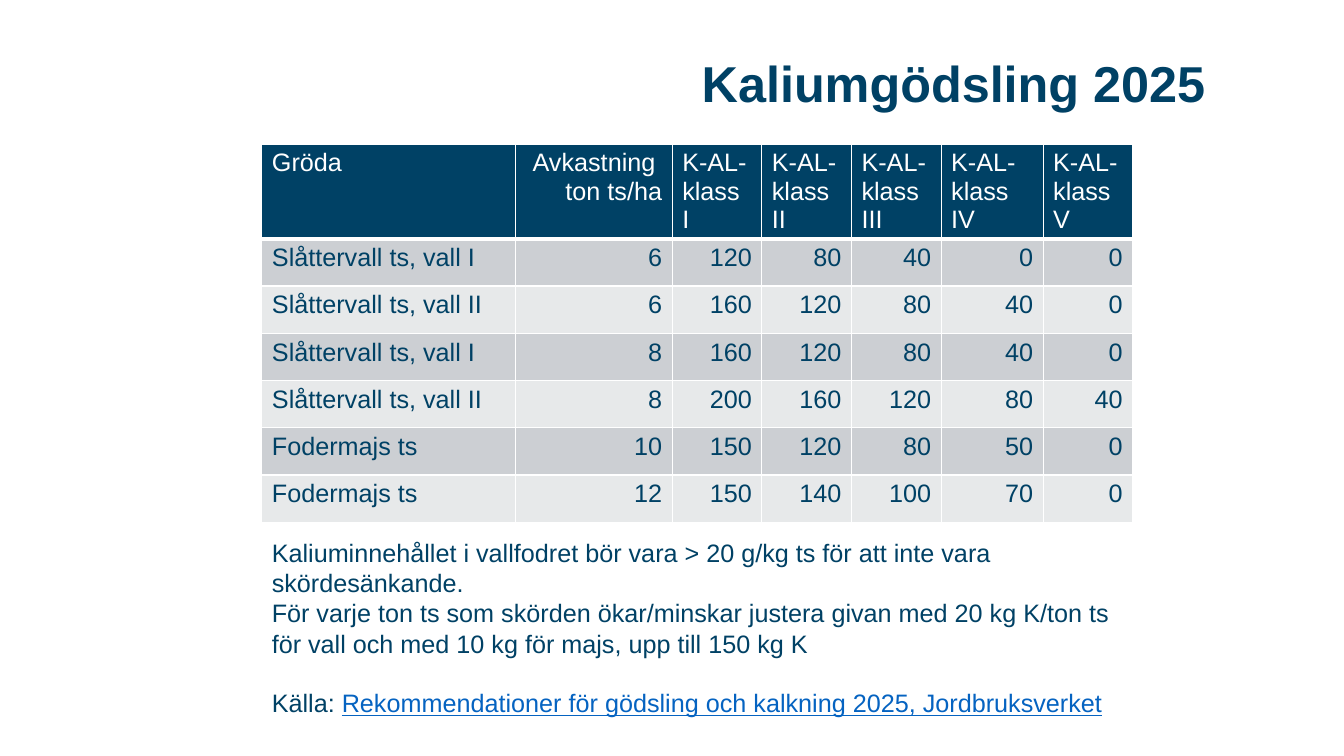
from lxml import etree
from pptx import Presentation
from pptx import util as u
from pptx.dml import color
from pptx.enum import text
from pptx.oxml import ns

LEFT, CENTER, RIGHT = text.PP_ALIGN.LEFT, text.PP_ALIGN.CENTER, text.PP_ALIGN.RIGHT
NAVY, WHITE, LINK = "004165", "FFFFFF", "0563C1"
BANDS = ("CCCFD3", "E7E9EA")
COLUMN_WIDTHS = (6.4, 3.94, 2.26, 2.26, 2.26, 2.57, 2.26)
ROW_HEIGHT = 1.19

HEADERS = (
    (("Gröda", LEFT),),
    (("Avkastning", CENTER), ("ton ts/ha", RIGHT)),
    (("K-AL-klass I", LEFT),),
    (("K-AL-klass", LEFT), ("II", LEFT)),
    (("K-AL-klass", LEFT), ("III", LEFT)),
    (("K-AL-klass IV", LEFT),),
    (("K-AL-klass", LEFT), ("V", LEFT)),
)
CROPS = (
    ("Slåttervall ts, vall I", 6, 120, 80, 40, 0, 0),
    ("Slåttervall ts, vall II", 6, 160, 120, 80, 40, 0),
    ("Slåttervall ts, vall I", 8, 160, 120, 80, 40, 0),
    ("Slåttervall ts, vall II", 8, 200, 160, 120, 80, 40),
    ("Fodermajs ts", 10, 150, 120, 80, 50, 0),
    ("Fodermajs ts", 12, 150, 140, 100, 70, 0),
)
ADVICE = (
    "Kaliuminnehållet i vallfodret bör vara > 20 g/kg ts för att inte vara skördesänkande.",
    "För varje ton ts som skörden ökar/minskar justera givan med 20 kg K/ton ts "
    "för vall och med 10 kg för majs, upp till 150 kg K",
)
SOURCE = "Rekommendationer för gödsling och kalkning 2025, Jordbruksverket"


def rgb(value):
    return color.RGBColor.from_string(value)


class SlideBuilder:
    """Holds the text style and the current slide."""

    def __init__(self, slide, font="Arial", size=18):
        self.slide = slide
        self.font = font
        self.size = size

    def style(self, para, fill=NAVY, align=LEFT, size=None, bold=False):
        para.alignment = align
        para.font.name = self.font
        para.font.size = u.Pt(size or self.size)
        para.font.bold = bold
        para.font.color.rgb = rgb(fill)

    def paragraph(self, frame, index):
        return frame.paragraphs[0] if index == 0 else frame.add_paragraph()

    def title(self, words, left, top, width, height):
        box = self.slide.shapes.title
        box.left, box.top = u.Cm(left), u.Cm(top)
        box.width, box.height = u.Cm(width), u.Cm(height)
        frame = box.text_frame
        frame.text = words
        frame.vertical_anchor = text.MSO_ANCHOR.MIDDLE
        frame.paragraphs[0].line_spacing = 0.9
        self.style(frame.paragraphs[0], align=RIGHT, size=36, bold=True)

    def borders(self, cell, bottom):
        properties = cell._tc.get_or_add_tcPr()
        for side, points in (("L", 1), ("R", 1), ("T", 1), ("B", bottom)):
            line = etree.SubElement(properties, ns.qn(f"a:ln{side}"), w=str(u.Pt(points)))
            fill = etree.SubElement(line, ns.qn("a:solidFill"))
            etree.SubElement(fill, ns.qn("a:srgbClr"), val=WHITE)

    def cell(self, cell, lines, ink, fill, bottom=1):
        for index, (words, align) in enumerate(lines):
            para = self.paragraph(cell.text_frame, index)
            para.add_run().text = words
            self.style(para, ink, align)
        self.borders(cell, bottom)
        cell.fill.solid()
        cell.fill.fore_color.rgb = rgb(fill)

    def table(self, left, top, width, height):
        frame = self.slide.shapes.add_table(
            len(CROPS) + 1, len(HEADERS), u.Cm(left), u.Cm(top), u.Cm(width), u.Cm(height)
        )
        table = frame.table
        for column, column_width in zip(table.columns, COLUMN_WIDTHS):
            column.width = u.Cm(column_width)
        for row in table.rows:
            row.height = u.Cm(ROW_HEIGHT)
        for column, lines in enumerate(HEADERS):
            self.cell(table.cell(0, column), lines, WHITE, NAVY, bottom=3)
        for row, values in enumerate(CROPS):
            for column, value in enumerate(values):
                lines = ((str(value), RIGHT if column else LEFT),)
                self.cell(table.cell(row + 1, column), lines, NAVY, BANDS[row % 2])

    def advice(self, left, top, width, height):
        box = self.slide.shapes.add_textbox(u.Cm(left), u.Cm(top), u.Cm(width), u.Cm(height))
        frame = box.text_frame
        frame.word_wrap = True
        frame.vertical_anchor = text.MSO_ANCHOR.MIDDLE
        for index, words in enumerate((*ADVICE, "Källa: ")):
            para = self.paragraph(frame, index)
            para.add_run().text = words
            self.style(para)
        para.space_before = u.Pt(21)
        span = para.add_run()
        span.text = SOURCE
        span.font.color.rgb = rgb(LINK)
        span.font.underline = True


def main():
    deck = Presentation()
    deck.slide_width, deck.slide_height = u.Cm(33.87), u.Cm(19.05)
    page = SlideBuilder(deck.slides.add_slide(deck.slide_layouts[5]))
    page.title("Kaliumgödsling 2025", 4.22, 0.84, 26.42, 2.64)
    page.table(6.6, 3.63, 21.92, 9.7)
    page.advice(6.6, 13.51, 22.4, 4.6)
    deck.save("out.pptx")


if __name__ == "__main__":
    main()
